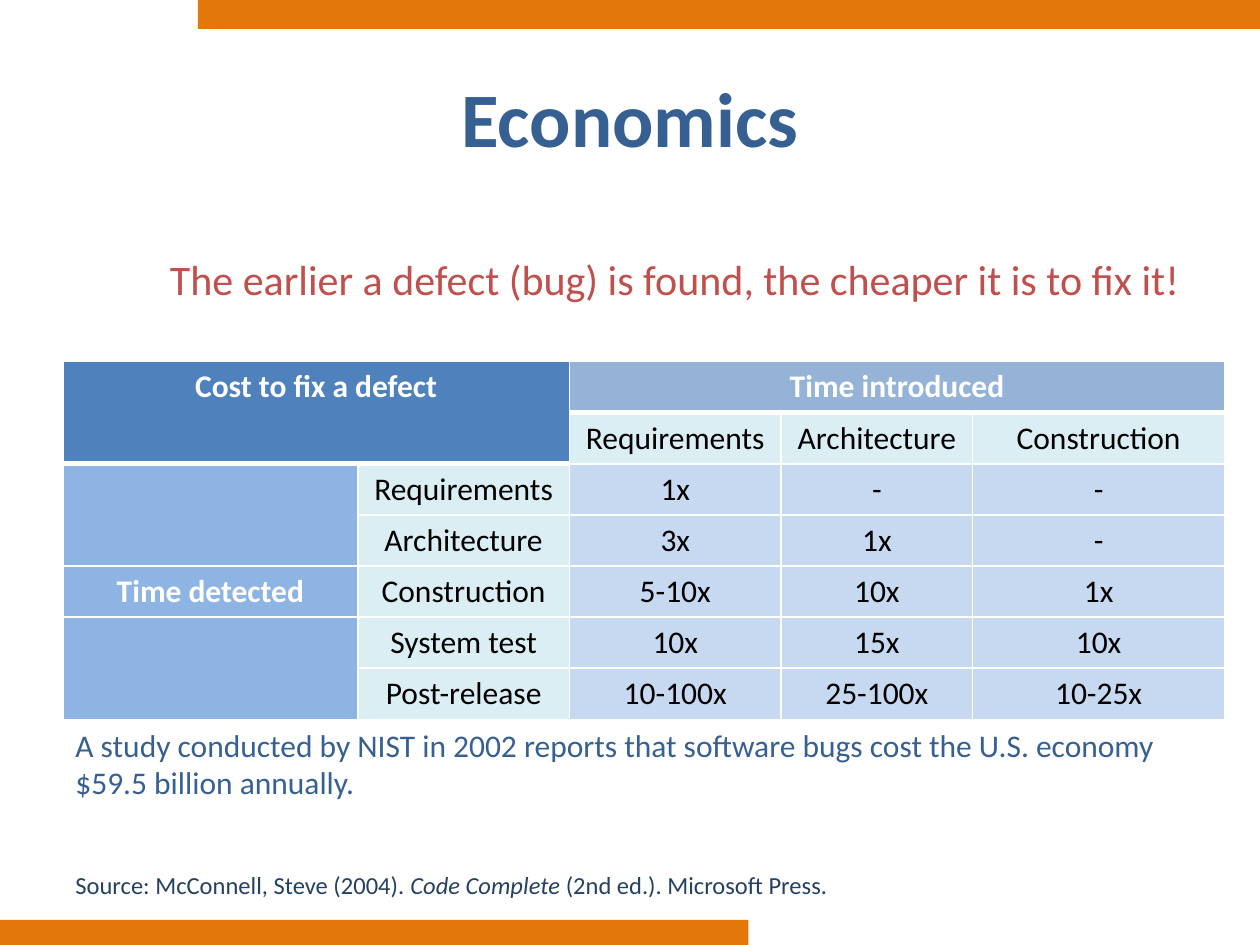
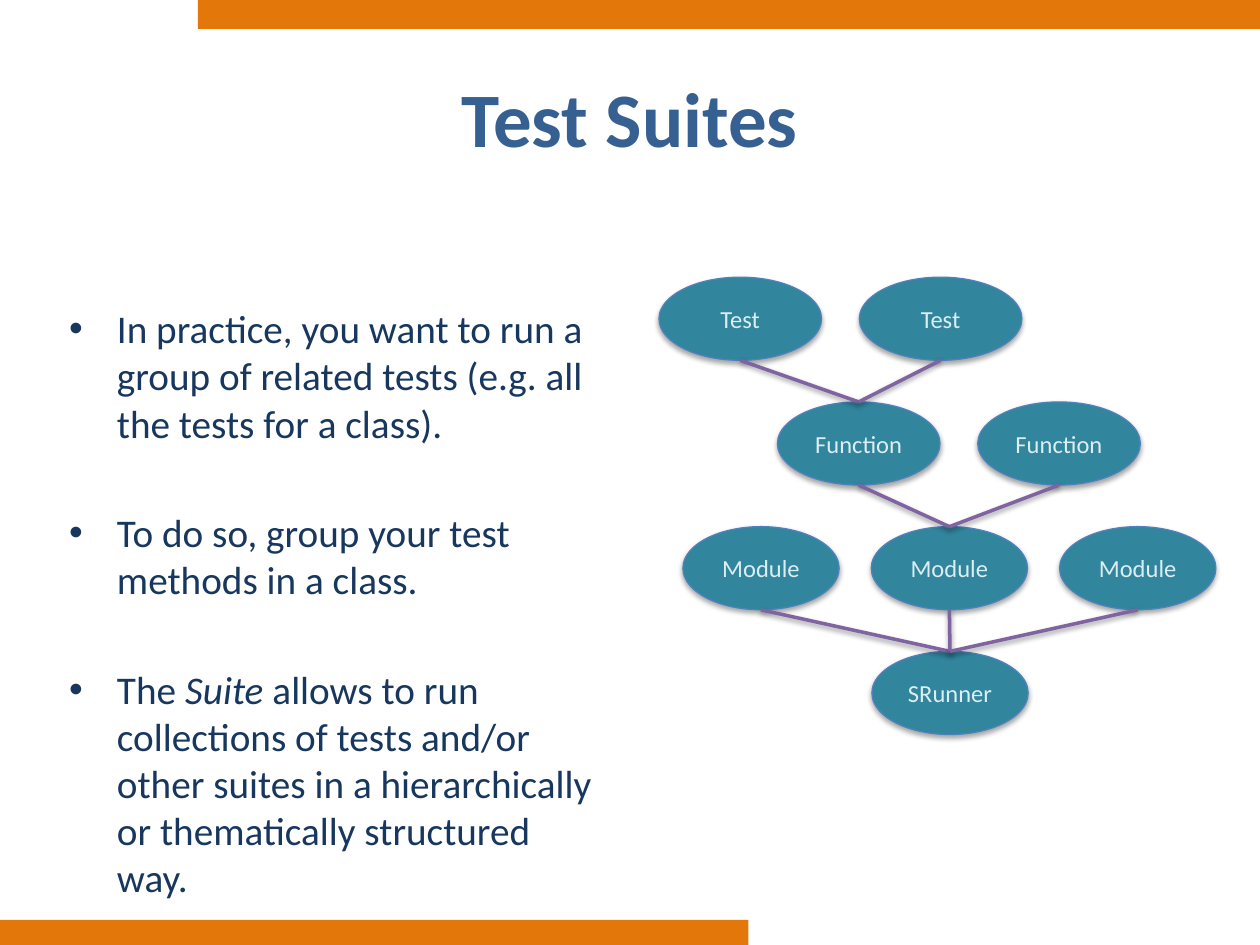
from lxml import etree
from pptx import Presentation
from pptx.dml.color import RGBColor
from pptx.enum.shapes import MSO_CONNECTOR, MSO_SHAPE
from pptx.enum.text import MSO_ANCHOR, PP_ALIGN
from pptx.oxml.ns import qn
from pptx.util import Inches, Pt

FONT = "Calibri"
ORANGE, BLUE, RED, NAVY, DARK = "E4770A", "376092", "C0504D", "254061", "17375E"
WHITE, BLACK, PALE = "FFFFFF", "000000", "DBEEF4"
HEAD, INTRODUCED, DETECTED, CELL = "4F81BD", "95B3D7", "8EB4E3", "C6D9F1"
TEAL, PURPLE = "31859C", "8064A2"

COLUMNS = [2.34, 1.68, 1.68, 1.52, 2]
COSTS = [
    ["Cost to fix a defect", "", "Time introduced", "", ""],
    ["", "", "Requirements", "Architecture", "Construction"],
    ["", "Requirements", "1x", "-", "-"],
    ["", "Architecture", "3x", "1x", "-"],
    ["Time detected", "Construction", "5-10x", "10x", "1x"],
    ["", "System test", "10x", "15x", "10x"],
    ["", "Post-release", "10-100x", "25-100x", "10-25x"],
]
MERGES = [((0, 0), (1, 1)), ((0, 2), (0, 4)), ((2, 0), (3, 0)), ((5, 0), (6, 0))]
POINTS = [
    [("In practice, you want to run a group of related tests "
      "(e.g. all the tests for a class).", False)],
    [("To do so, group your test methods in a class.", False)],
    [("The ", False), ("Suite ", True),
     ("allows to run collections of tests and/or other suites in a "
      "hierarchically or thematically structured way.", False)],
]
LEVELS = [
    ("Test", 1.29, 0, 1.59, 2),
    ("Function", 1.29, 0.94, 1.59, 2),
    ("Module", 1.24, 0.19, 1.495, 3),
    ("SRunner", 1.24, 1.69, 0, 1),
]
PARENTS = [0, 1, 0]


def rgb(value):
    """Turn a hex string into a colour."""
    return RGBColor.from_string(value)


def add_run(p, text, size, color, bold=False, italic=False):
    """Append one styled run to a paragraph."""
    r = p.add_run()
    r.text = text
    f = r.font
    f.name, f.size, f.bold, f.italic = FONT, Pt(size), bold, italic
    f.color.rgb = rgb(color)


def add_text(s, box, runs, size, color, align=PP_ALIGN.LEFT,
             anchor=MSO_ANCHOR.TOP, bold=False, wrap=True):
    """Add a text box holding one paragraph of (text, italic) runs."""
    tf = s.shapes.add_textbox(*map(Inches, box)).text_frame
    tf.word_wrap, tf.vertical_anchor = wrap, anchor
    p = tf.paragraphs[0]
    p.alignment = align
    for text, italic in runs:
        add_run(p, text, size, color, bold, italic)


def add_frame(prs, title):
    """Add a slide with the two bands and its title."""
    s = prs.slides.add_slide(prs.slide_layouts[6])
    for box in [(1.57, 0, 8.43, 0.23), (0, 7.3, 5.94, 0.2)]:
        band = s.shapes.add_shape(MSO_SHAPE.RECTANGLE, *map(Inches, box))
        band.shadow.inherit = False
        band.fill.solid()
        band.fill.fore_color.rgb = rgb(ORANGE)
        band.line.fill.background()
    add_text(s, (0.5, 0.3, 9, 1.25), [(title, False)], 44, BLUE,
             PP_ALIGN.CENTER, MSO_ANCHOR.MIDDLE, bold=True)
    return s


def cell_style(row, col):
    """Return the fill, text colour and weight of a table cell."""
    if row < 2 and col < 2:
        return HEAD, WHITE, True
    if row == 0:
        return INTRODUCED, WHITE, True
    if col == 0:
        return DETECTED, WHITE, True
    return (PALE if row == 1 or col == 1 else CELL), BLACK, False


def set_borders(cell, row, col):
    """Give a cell white borders, thicker along the header edge."""
    edge = 2 if col < 2 else 1
    thick = {"T": row == edge, "B": row < edge}
    tc_pr = cell._tc.get_or_add_tcPr()
    for i, side in enumerate("LRTB"):
        ln = etree.Element(qn(f"a:ln{side}"), w=str(Pt(3 if thick.get(side) else 1)))
        fill = etree.SubElement(ln, qn("a:solidFill"))
        etree.SubElement(fill, qn("a:srgbClr"), val=WHITE)
        tc_pr.insert(i, ln)


def add_cost_table(s, box):
    """Draw the table of defect costs."""
    table = s.shapes.add_table(len(COSTS), len(COLUMNS), *map(Inches, box)).table
    for column, width in zip(table.columns, COLUMNS):
        column.width = Inches(width)
    for i, texts in enumerate(COSTS):
        table.rows[i].height = Inches(box[3] / len(COSTS))
        for j, text in enumerate(texts):
            cell = table.cell(i, j)
            fill, color, bold = cell_style(i, j)
            cell.fill.solid()
            cell.fill.fore_color.rgb = rgb(fill)
            set_borders(cell, i, j)
            p = cell.text_frame.paragraphs[0]
            p.alignment = PP_ALIGN.CENTER
            if text:
                add_run(p, text, 18, color, bold)
    for first, last in MERGES:
        table.cell(*first).merge(table.cell(*last))


def add_bullets(s, box):
    """List the points about test suites."""
    tf = s.shapes.add_textbox(*map(Inches, box)).text_frame
    tf.word_wrap = True
    for i, runs in enumerate(POINTS):
        p = tf.add_paragraph() if i else tf.paragraphs[0]
        p_pr = p._p.get_or_add_pPr()
        p_pr.set("marL", str(Inches(0.38)))
        p_pr.set("indent", str(-Inches(0.38)))
        etree.SubElement(p_pr, qn("a:buFont"), typeface="Arial")
        etree.SubElement(p_pr, qn("a:buChar"), char="•")
        p.space_before = Pt(35.8 if i else 0)
        for text, italic in runs:
            add_run(p, text, 22.4, DARK, italic=italic)


def add_shadow(shape, distance, opacity):
    """Give a shape a soft shadow straight below it."""
    effects = etree.SubElement(shape._element.spPr, qn("a:effectLst"))
    shadow = etree.SubElement(effects, qn("a:outerShdw"), blurRad=str(Pt(3.1)),
                              dist=str(Pt(distance)), dir="5400000", rotWithShape="0")
    color = etree.SubElement(shadow, qn("a:srgbClr"), val=BLACK)
    etree.SubElement(color, qn("a:alpha"), val=str(opacity * 1000))


def add_node(s, box, label):
    """Add one labelled ellipse of the tree."""
    node = s.shapes.add_shape(MSO_SHAPE.OVAL, *map(Inches, box))
    node.fill.solid()
    node.fill.fore_color.rgb = rgb(TEAL)
    node.line.color.rgb = rgb(HEAD)
    node.line.width = Pt(0.75)
    add_shadow(node, 1.8, 35)
    tf = node.text_frame
    tf.margin_left = tf.margin_right = 0
    tf.vertical_anchor = MSO_ANCHOR.MIDDLE
    p = tf.paragraphs[0]
    p.alignment = PP_ALIGN.CENTER
    add_run(p, label, 14, PALE)


def add_suite_tree(s, left, top, height=0.66, step=0.99):
    """Draw the levels from tests down to the runner and link them."""
    centers = []
    for i, (label, width, offset, pitch, count) in enumerate(LEVELS):
        lefts = [left + offset + pitch * k for k in range(count)]
        centers.append([x + width / 2 for x in lefts])
        for x in lefts:
            add_node(s, (x, top + step * i, width, height), label)
    for i, parent in enumerate(PARENTS):
        y = top + step * i
        for x in centers[i]:
            ends = (x, y + height, centers[i + 1][parent], y + step)
            link = s.shapes.add_connector(MSO_CONNECTOR.STRAIGHT, *map(Inches, ends))
            link.line.color.rgb = rgb(PURPLE)
            link.line.width = Pt(2)
            add_shadow(link, 1.6, 38)


def economics_slide(prs):
    """Build the slide on the cost of defects."""
    s = add_frame(prs, "Economics")
    add_cost_table(s, (0.5, 2.87, 9.21, 2.84))
    add_text(s, (0.5, 5.71, 9.21, 0.71),
             [("A study conducted by NIST in 2002 reports that software bugs "
               "cost the U.S. economy $59.5 billion annually.", False)], 18, BLUE)
    add_text(s, (1.25, 1.96, 8.22, 0.5),
             [("The earlier a defect (bug) is found, the cheaper it is to fix it!",
               False)], 24, RED, wrap=False)
    add_text(s, (0.5, 6.86, 6.29, 0.34),
             [("Source: McConnell, Steve (2004). ", False), ("Code Complete", True),
              (" (2nd ed.). Microsoft Press.", False)], 14, NAVY)


def suites_slide(prs):
    """Build the slide on test suites."""
    s = add_frame(prs, "Test Suites")
    add_bullets(s, (0.45, 2.37, 4.42, 3.87))
    add_suite_tree(s, 5.23, 2.2)


def main():
    """Build and save the presentation."""
    prs = Presentation()
    prs.slide_width, prs.slide_height = Inches(10), Inches(7.5)
    economics_slide(prs)
    suites_slide(prs)
    prs.save("out.pptx")


if __name__ == "__main__":
    main()
